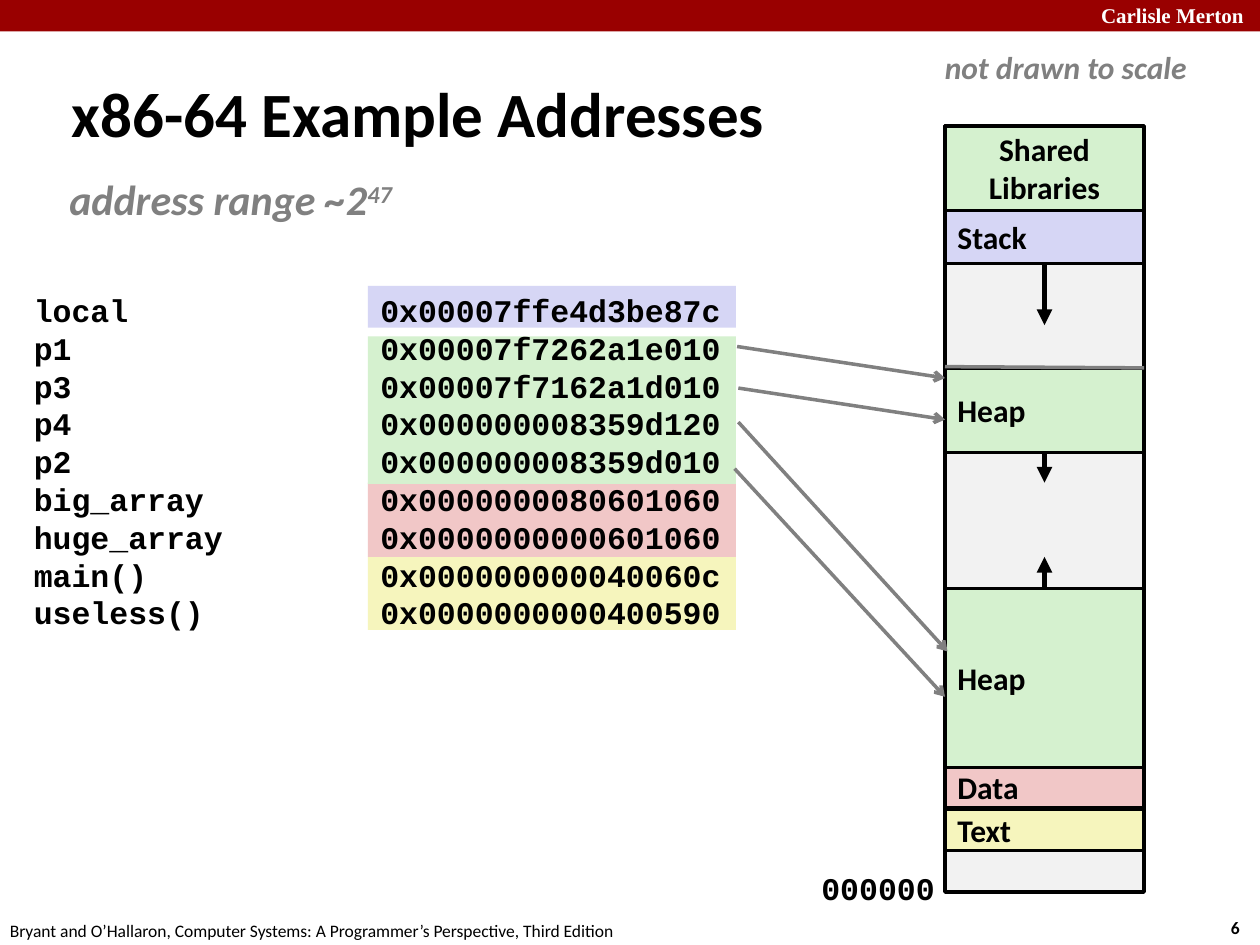
from dataclasses import dataclass

import pptx
import pptx.util
import pptx.dml.color
import pptx.enum.shapes
import pptx.enum.text
import pptx.oxml
import pptx.oxml.ns
from pptx.util import Inches

ANCHOR = pptx.enum.text.MSO_ANCHOR
ALIGN = pptx.enum.text.PP_ALIGN


@dataclass(frozen=True)
class Theme:
    """Colours, fonts and type sizes of the slide."""
    bar: str = "990000"
    white: str = "FFFFFF"
    ink: str = "000000"
    grey: str = "808080"
    free: str = "F2F2F2"
    text: str = "F6F5BD"
    data: str = "F1C7C7"
    stack: str = "D6D6F5"
    heap: str = "D5F1CF"
    sans: str = "Calibri"
    mono: str = "Courier New"
    serif: str = "Times New Roman"
    title: int = 36
    subtitle: int = 24
    body: int = 18
    brand: int = 12
    small: int = 10


T = Theme()


def rgb(color):
    """Return a colour object for a hex string."""
    return pptx.dml.color.RGBColor.from_string(color)


def write(tf, lines, size=T.body, font=T.sans, color=T.ink, bold=True,
          italic=False, align=ALIGN.LEFT, anchor=ANCHOR.TOP, wrap=False):
    """Fill a text frame with one formatted paragraph per line."""
    frame = {"word_wrap": wrap, "vertical_anchor": anchor,
             "auto_size": pptx.enum.text.MSO_AUTO_SIZE.NONE}
    for name, value in frame.items():
        setattr(tf, name, value)
    form = {"size": pptx.util.Pt(size), "name": font, "bold": bold, "italic": italic}
    for i, line in enumerate(lines):
        p = tf.paragraphs[0] if i == 0 else tf.add_paragraph()
        p.alignment = align
        for part in [line] if isinstance(line, str) else line:
            r = p.add_run()
            r.text = part
            for name, value in form.items():
                setattr(r.font, name, value)
            r.font.color.rgb = rgb(color)


def add_text(s, box, lines, **form):
    """Add a text box and return its text frame."""
    tf = s.shapes.add_textbox(*map(Inches, box)).text_frame
    write(tf, lines, **form)
    return tf


def add_rect(s, box, fill, line=None):
    """Add a flat rectangle, outlined when a line colour is given."""
    sp = s.shapes.add_shape(pptx.enum.shapes.MSO_SHAPE.RECTANGLE, *map(Inches, box))
    sp.shadow.inherit = False
    sp.fill.solid()
    sp.fill.fore_color.rgb = rgb(fill)
    if line:
        sp.line.color.rgb = rgb(line)
        sp.line.width = pptx.util.Pt(2)
    else:
        sp.line.fill.background()
    return sp


def add_line(s, start, end, color=T.grey, width=2, head=None):
    """Add a straight line with an optional arrowhead at its end."""
    sp = s.shapes.add_connector(pptx.enum.shapes.MSO_CONNECTOR.STRAIGHT,
                                *map(Inches, (*start, *end)))
    sp.line.color.rgb = rgb(color)
    sp.line.width = pptx.util.Pt(width)
    if head:
        tail = pptx.oxml.parse_xml(
            f'<a:tailEnd {pptx.oxml.ns.nsdecls("a")} type="{head}"/>')
        sp.line._get_or_add_ln().append(tail)
    sp._element.spPr.append(
        pptx.oxml.parse_xml(f'<a:effectLst {pptx.oxml.ns.nsdecls("a")}/>'))


def add_frame(s, box):
    """Draw the top bar and the footer along the slide edges."""
    x, y, w, h = box
    add_rect(s, (x, y, w, 0.25), T.bar)
    add_text(s, (x + w - 1.36, y - 0.03, 1.43, 0.3), ["Carlisle Merton"],
             size=T.brand, font=T.serif, color=T.white)
    add_text(s, (x + w - 0.33, y + h - 0.27, 0.37, 0.27), ["6"], size=T.small)
    add_text(s, (x - 0.02, y + h - 0.25, 5.08, 0.27),
             ["Bryant and O’Hallaron, Computer Systems: "
              "A Programmer’s Perspective, Third Edition"],
             size=T.small, bold=False)


def add_heading(s, box):
    """Place the title and the address range below it."""
    x, y, w, h = box
    sp = s.shapes.title
    place = {"left": x, "top": y, "width": w, "height": 0.63}
    for name, value in place.items():
        setattr(sp, name, Inches(value))
    write(sp.text_frame, ["x86-64 Example Addresses"], size=T.title,
          anchor=ANCHOR.MIDDLE, wrap=True)
    pPr = sp.text_frame.paragraphs[0]._p.get_or_add_pPr()
    pPr.set("marL", str(Inches(0.13)))
    pPr.set("indent", str(Inches(-0.13)))
    tf = add_text(s, (x + 0.03, y + h - 0.51, 2.71, 0.51),
                  [("address range ~2", "47")],
                  size=T.subtitle, color=T.grey, italic=True)
    tf.margin_left = tf.margin_right = Inches(0.05)
    tf.paragraphs[0].runs[1].font._element.set("baseline", "30000")


def add_addresses(s, box):
    """List names and addresses over bands coloured by memory region."""
    x, y, w, h = box
    bands = [(2.16, 0.58, T.text), (1.57, 0.59, T.data),
             (0.01, 0.33, T.stack), (0.41, 1.17, T.heap)]
    for top, height, color in bands:
        add_rect(s, (x + 2.75, y + top, 2.92, height), color)
    rows = [("local", "0x00007ffe4d3be87c"), ("p1", "0x00007f7262a1e010"),
            ("p3", "0x00007f7162a1d010"), ("p4", "0x000000008359d120"),
            ("p2", "0x000000008359d010"), ("big_array", "0x0000000080601060"),
            ("huge_array", "0x0000000000601060"), ("main()", "0x000000000040060c"),
            ("useless()", "0x0000000000400590")]
    tf = add_text(s, box, ["\t".join(row) for row in rows], font=T.mono, wrap=True)
    for p in tf.paragraphs:
        p._p.get_or_add_pPr().append(pptx.oxml.parse_xml(
            f'<a:tabLst {pptx.oxml.ns.nsdecls("a")}>'
            f'<a:tab pos="{Inches(2.75)}" algn="l"/></a:tabLst>'))


def add_memory(s, box):
    """Draw the memory map with its regions and growth arrows."""
    x, y, w, h = box
    add_text(s, (x - 0.1, y - 0.67, 2.13, 0.4), ["not drawn to scale"],
             color=T.grey, italic=True)
    add_text(s, (x - 1.08, y + h - 0.23, 1.11, 0.4), ["000000"], font=T.mono)
    add_rect(s, box, T.free, T.ink)
    regions = [(["Text"], 5.42, 0.33, T.text), (["Data"], 5.08, 0.33, T.data),
               (["Heap"], 3.67, 1.42, T.heap), (["Heap"], 1.92, 0.67, T.heap),
               (["Stack"], 0.67, 0.42, T.stack),
               (["Shared", "Libraries"], 0, 0.67, T.heap)]
    for lines, top, height, color in regions:
        sp = add_rect(s, (x, y + top, w, height), color, T.ink)
        write(sp.text_frame, lines, anchor=ANCHOR.MIDDLE, wrap=len(lines) > 1,
              align=ALIGN.CENTER if len(lines) > 1 else ALIGN.LEFT)
    for start, end in [(1.08, 1.58), (2.58, 2.83), (3.67, 3.42)]:
        add_line(s, (x + w / 2, y + start), (x + w / 2, y + end),
                 T.ink, 3, "triangle")
    add_line(s, (x, y + 1.91), (x + w, y + 1.92))


def add_links(s, box):
    """Point from the heap addresses to their places in the memory map."""
    x, y, w, h = box
    links = [(0.02, 0, w, 0.25), (0.03, 0.33, w, 0.58),
             (0.03, 0.6, w + 0.02, 2.42), (0, 0.97, w, h)]
    for x1, y1, x2, y2 in links:
        add_line(s, (x + x1, y + y1), (x + x2, y + y2), head="arrow")


def main():
    """Build and save the slide."""
    prs = pptx.Presentation()
    prs.slide_width, prs.slide_height = Inches(10), Inches(7.5)
    s = prs.slides.add_slide(prs.slide_layouts[5])
    add_frame(s, (0, 0, 10, 7.5))
    add_heading(s, (0.47, 0.58, 7.19, 1.26))
    add_addresses(s, (0.17, 2.26, 6.17, 2.82))
    add_memory(s, (7.5, 1, 1.58, 6.08))
    add_links(s, (5.83, 2.75, 1.67, 2.78))
    prs.save("out.pptx")


if __name__ == "__main__":
    main()
